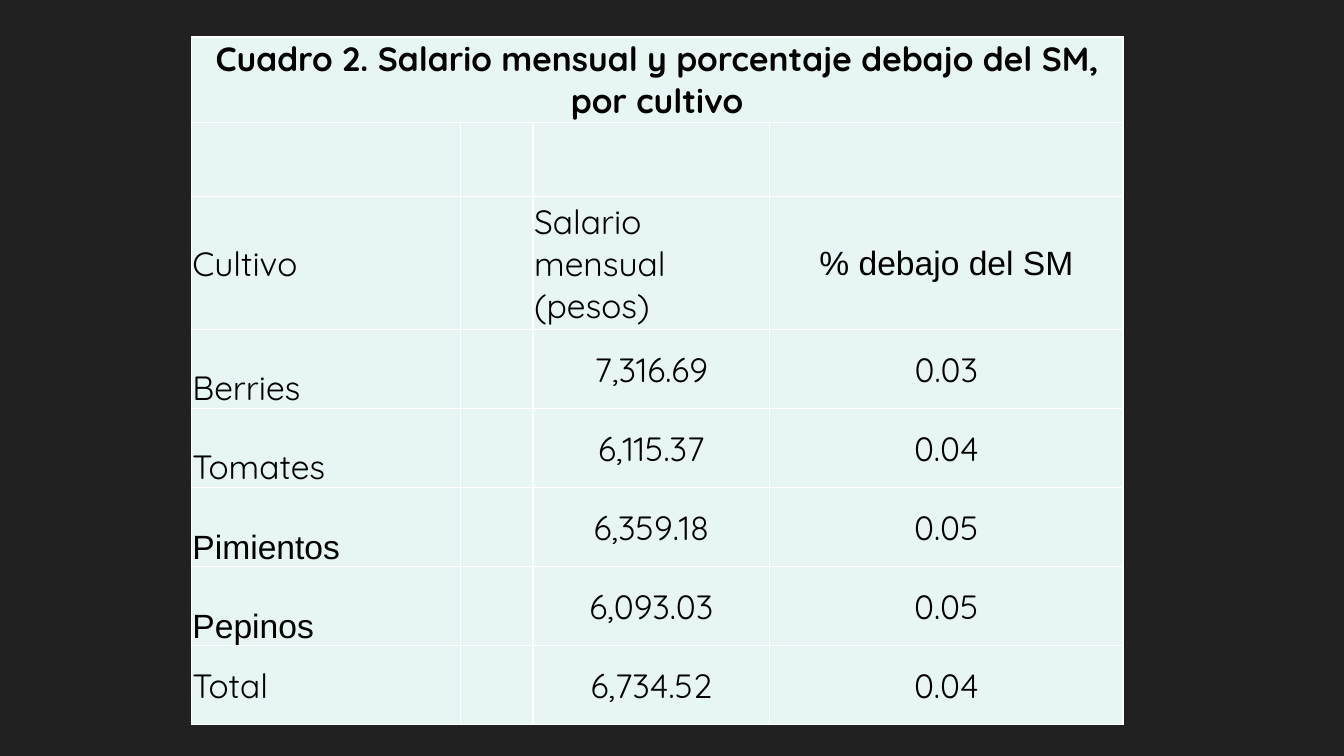
from dataclasses import dataclass

from lxml import etree
from pptx import Presentation
from pptx.dml.color import RGBColor
from pptx.enum.text import MSO_ANCHOR, PP_ALIGN
from pptx.oxml.ns import qn
from pptx.util import Cm, Pt

LEFT, CENTER = PP_ALIGN.LEFT, PP_ALIGN.CENTER
MIDDLE, BOTTOM = MSO_ANCHOR.MIDDLE, MSO_ANCHOR.BOTTOM

TITLE = "Cuadro 2. Salario mensual y porcentaje debajo del SM, por cultivo"
HEADINGS = ("Cultivo", "", "Salario mensual (pesos)", "% debajo del SM")
CROPS = [
    ("Berries", "", "7,316.69", "0.03"),
    ("Tomates", "", "6,115.37", "0.04"),
    ("Pimientos", "", "6,359.18", "0.05"),
    ("Pepinos", "", "6,093.03", "0.05"),
    ("Total", "", "6,734.52", "0.04"),
]
ROWS = [(TITLE, "", "", ""), ("", "", "", ""), HEADINGS, *CROPS]
ARIAL_TEXTS = {"% debajo del SM", "Pimientos", "Pepinos"}

TABLE_LEFT, TABLE_TOP = 4.82, 0.93
COLUMN_WIDTHS = (6.79, 1.82, 5.97, 8.9)
ROW_HEIGHTS = (2.06, 1.88, 3.35) + (1.99,) * len(CROPS)
TITLE_ROW, HEADING_ROW, TOTAL_ROW = 0, 2, len(ROWS) - 1


@dataclass(frozen=True)
class Theme:
    background: str = "212121"
    cell: str = "E7F5F3"
    border: str = "FFFFFF"
    text: str = "000000"
    font: str = "Quicksand"
    second_font: str = "Arial"
    text_size: int = 24
    border_width: int = 1


THEME = Theme()


def add_borders(cell):
    properties = cell._tc.get_or_add_tcPr()
    for side in ("a:lnL", "a:lnR", "a:lnT", "a:lnB"):
        line = etree.SubElement(properties, qn(side), w=str(Pt(THEME.border_width)))
        fill = etree.SubElement(line, qn("a:solidFill"))
        etree.SubElement(fill, qn("a:srgbClr"), val=THEME.border)


def style_cell(cell):
    add_borders(cell)
    cell.fill.solid()
    cell.fill.fore_color.rgb = RGBColor.from_string(THEME.cell)
    cell.margin_left = cell.margin_right = cell.margin_top = Cm(0.03)
    cell.margin_bottom = Cm(0)


def write_cell(cell, text, alignment, anchor, bold):
    cell.vertical_anchor = anchor
    paragraph = cell.text_frame.paragraphs[0]
    paragraph.alignment = alignment
    run = paragraph.add_run()
    run.text = text
    run.font.name = THEME.second_font if text in ARIAL_TEXTS else THEME.font
    run.font.size = Pt(THEME.text_size)
    run.font.bold = bold
    run.font.color.rgb = RGBColor.from_string(THEME.text)


def cell_alignment(row, column):
    if row == TITLE_ROW or column == 3:
        return CENTER
    return CENTER if column == 2 and row > HEADING_ROW else LEFT


def cell_anchor(row, column):
    is_crop_name = column == 0 and HEADING_ROW < row < TOTAL_ROW
    return BOTTOM if is_crop_name else MIDDLE


def add_salary_table(slide):
    table = slide.shapes.add_table(
        len(ROWS), len(COLUMN_WIDTHS), Cm(TABLE_LEFT), Cm(TABLE_TOP),
        Cm(sum(COLUMN_WIDTHS)), Cm(sum(ROW_HEIGHTS)),
    ).table
    table.first_row = table.horz_banding = False
    for column, width in zip(table.columns, COLUMN_WIDTHS):
        column.width = Cm(width)
    for row, height in zip(table.rows, ROW_HEIGHTS):
        row.height = Cm(height)
    table.cell(TITLE_ROW, 0).merge(table.cell(TITLE_ROW, len(COLUMN_WIDTHS) - 1))
    for row, texts in enumerate(ROWS):
        for column, text in enumerate(texts):
            cell = table.cell(row, column)
            style_cell(cell)
            if text:
                write_cell(cell, text, cell_alignment(row, column),
                           cell_anchor(row, column), row == TITLE_ROW)


def main():
    presentation = Presentation()
    presentation.slide_width, presentation.slide_height = Cm(33.87), Cm(19.05)
    slide = presentation.slides.add_slide(presentation.slide_layouts[6])
    slide.background.fill.solid()
    slide.background.fill.fore_color.rgb = RGBColor.from_string(THEME.background)
    add_salary_table(slide)
    presentation.save("out.pptx")


if __name__ == "__main__":
    main()
